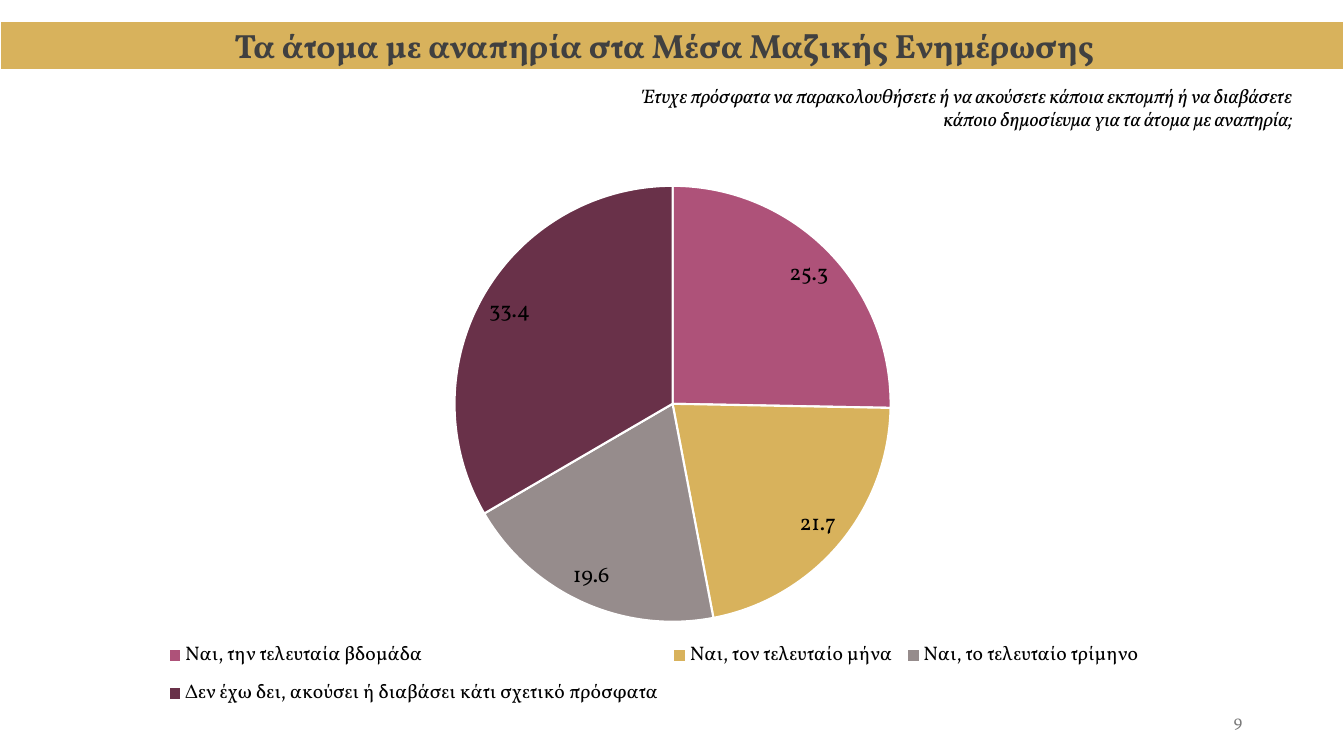
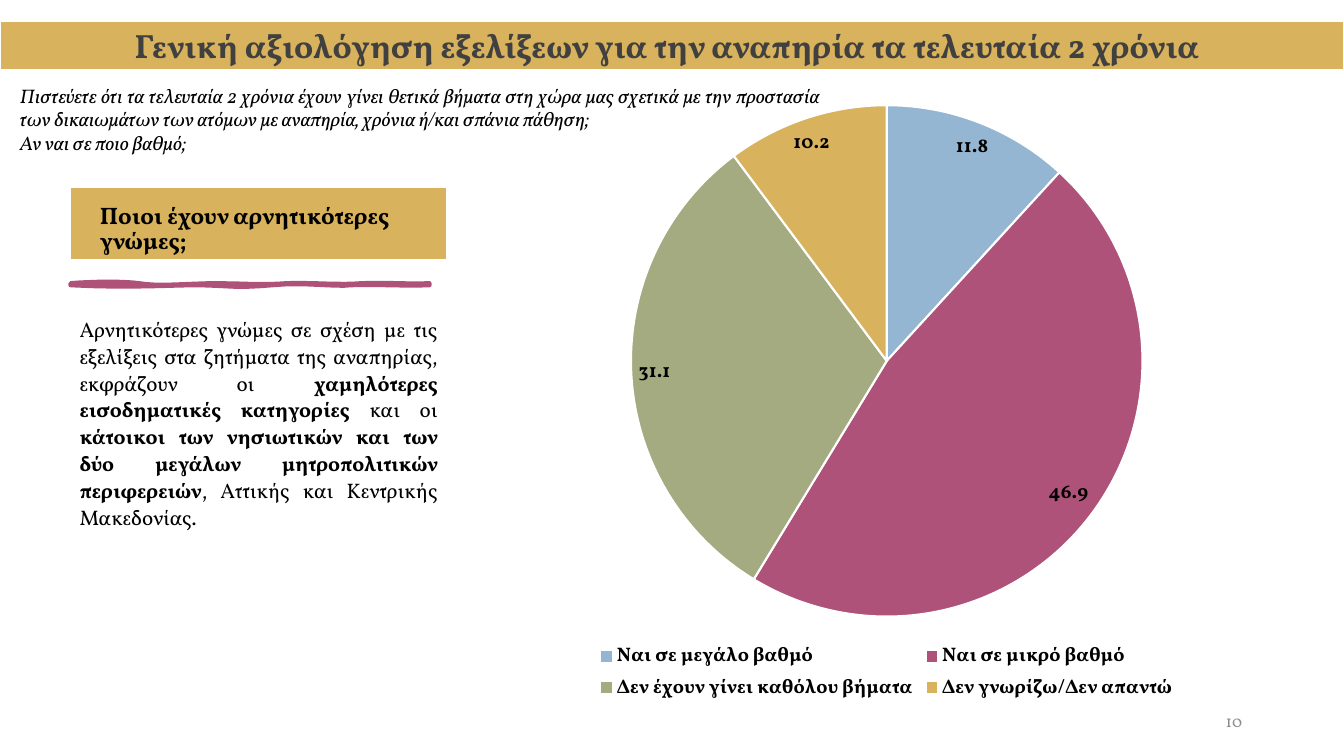
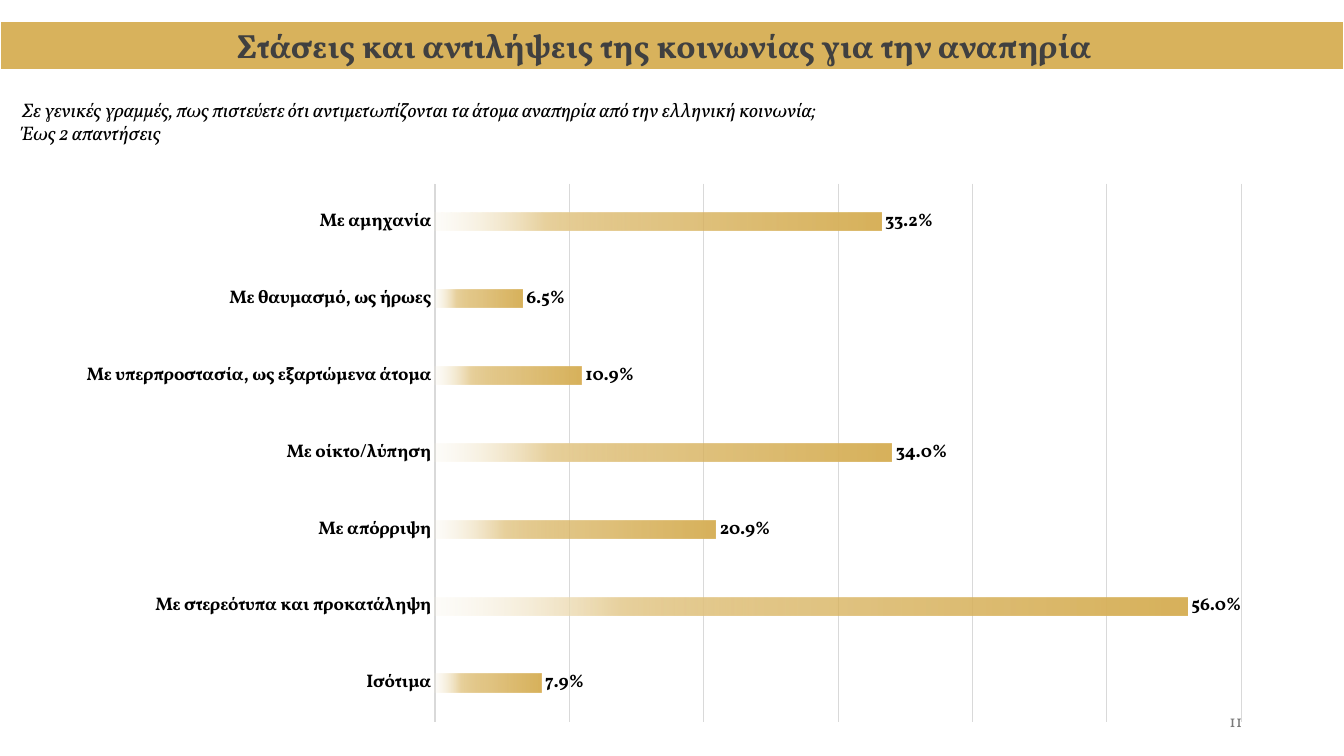
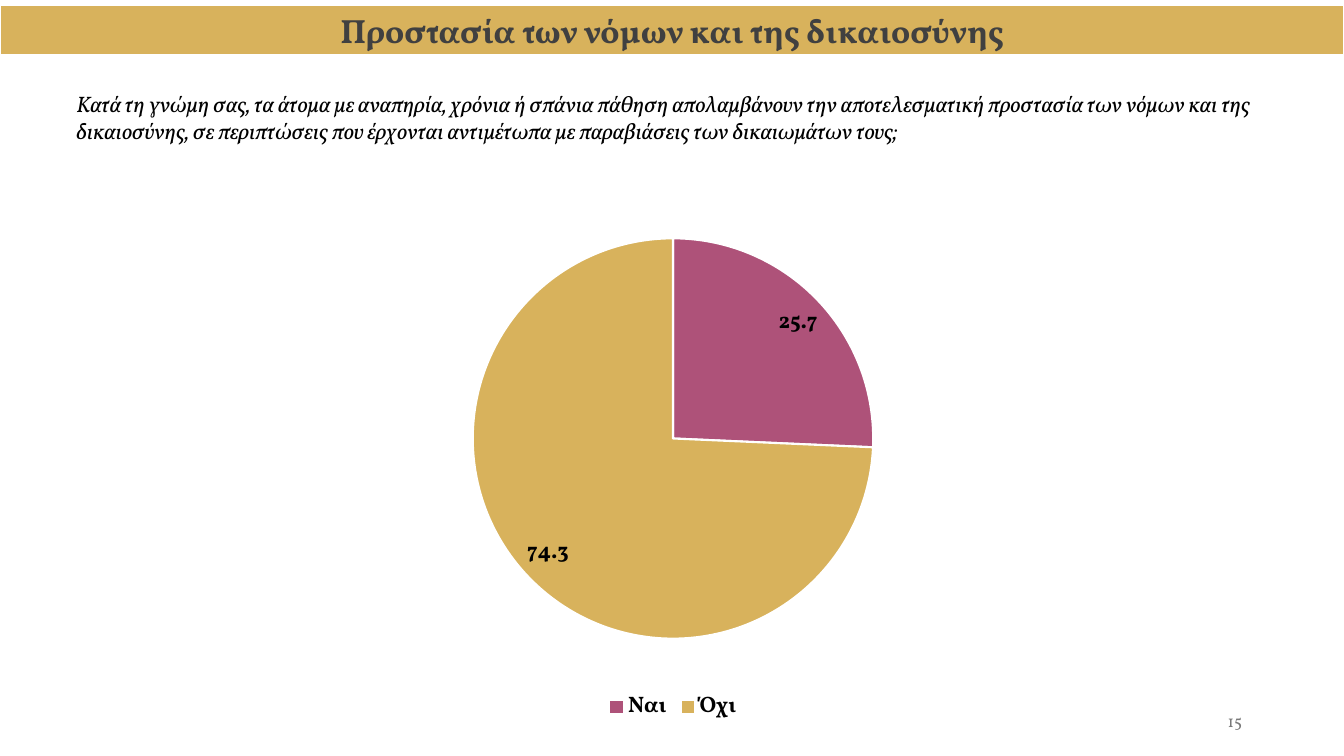
"""Build four slides of survey results about disability, with pie and bar charts."""
from lxml import etree
from pptx import Presentation
from pptx.chart.data import CategoryChartData
from pptx.dml.color import RGBColor
from pptx.enum.chart import XL_CHART_TYPE as ChartType, XL_LABEL_POSITION as LabelPosition
from pptx.enum.chart import XL_LEGEND_POSITION as LegendPosition, XL_TICK_LABEL_POSITION as TickLabels
from pptx.enum.chart import XL_TICK_MARK as TickMark
from pptx.enum.shapes import MSO_SHAPE as Shape
from pptx.enum.text import MSO_ANCHOR as Anchor, PP_ALIGN as Align
from pptx.oxml import parse_xml
from pptx.oxml.ns import nsdecls, qn
from pptx.util import Inches, Pt

WIDTH, HEIGHT = 13.33, 7.5
FONT = "Vollkorn"
GOLD, ROSE, PLUM, TAUPE = "D8B25C", "AE5279", "693149", "968C8C"
BLUE, SAGE, WHITE, BLACK = "94B6D2", "A5AB81", "FFFFFF", "000000"
TITLE_STYLE = {"size": 24, "bold": True, "color": "404040"}
NUMBER_BOX = (9.42, 6.95, 3, 0.4)
GRADIENT = [(0, GOLD, 100), (51, GOLD, 75), (75, "E8D19D", 100), (100, "F7F0DE", 15)]

SLIDES = [
    {"title": "Τα άτομα με αναπηρία στα Μέσα Μαζικής Ενημέρωσης",
     "number": "9", "title_inset": 0.26,
     "question": ["Έτυχε πρόσφατα να παρακολουθήσετε ή να ακούσετε κάποια εκπομπή ή να διαβάσετε "
                  "κάποιο δημοσίευμα για τα άτομα με αναπηρία;"],
     "question_box": (6.24, 0.78, 6.68, 0.57), "align": Align.RIGHT,
     "chart_box": (0.7, 1.35, 11.93, 5.95), "plot": (0.315, 0.083, 0.371, 0.727),
     "font": {"size": 16, "bold": False}, "legend_size": 14,
     "legend": (0.075, 0.825, 0.82, 0.145),
     "data": [("Ναι, την τελευταία βδομάδα", 25.3, ROSE),
              ("Ναι, τον τελευταίο μήνα", 21.7, GOLD),
              ("Ναι, το τελευταίο τρίμηνο", 19.6, TAUPE),
              ("Δεν έχω δει, ακούσει ή διαβάσει κάτι σχετικό πρόσφατα", 33.4, PLUM)]},
    {"title": "Γενική αξιολόγηση εξελίξεων για την αναπηρία τα τελευταία 2 χρόνια",
     "number": "10", "number_color": "8C8C8C",
     "question": ["Πιστεύετε ότι τα τελευταία 2 χρόνια έχουν γίνει θετικά βήματα στη χώρα μας "
                  "σχετικά με την προστασία των δικαιωμάτων των ατόμων με αναπηρία, χρόνια "
                  "ή/και σπάνια πάθηση;", "Αν ναι σε ποιο βαθμό;"],
     "question_box": (0.1, 0.78, 8.14, 0.81), "align": Align.JUSTIFY,
     "chart_box": (5.02, 0.9, 7.55, 6.1), "plot": (0.164, 0.023, 0.672, 0.833),
     "font": {"size": 14, "bold": True}, "legend_size": 14,
     "data": [("Ναι σε μεγάλο βαθμό", 11.8, BLUE),
              ("Ναι σε μικρό βαθμό", 46.9, ROSE),
              ("Δεν έχουν γίνει καθόλου βήματα", 31.1, SAGE),
              ("Δεν γνωρίζω/Δεν απαντώ", 10.2, GOLD)],
     "heading": "Ποιοι έχουν αρνητικότερες γνώμες;",
     "comment": [("Αρνητικότερες γνώμες σε σχέση με τις εξελίξεις στα ζητήματα της αναπηρίας, "
                  "εκφράζουν οι ", False),
                 ("χαμηλότερες εισοδηματικές κατηγορίες ", True),
                 ("και οι ", False),
                 ("κάτοικοι των νησιωτικών και των δύο μεγάλων μητροπολιτικών περιφερειών", True),
                 (", Αττικής και Κεντρικής Μακεδονίας.", False)]},
    {"title": "Στάσεις και αντιλήψεις της κοινωνίας για την αναπηρία",
     "number": "11", "title_inset": 0.26,
     "question": ["Σε γενικές γραμμές, πως πιστεύετε ότι αντιμετωπίζονται τα άτομα αναπηρία "
                  "από την ελληνική κοινωνία;", "Έως 2 απαντήσεις"],
     "question_box": (0.12, 0.92, 10.13, 0.57),
     "chart_box": (0.62, 1.71, 11.93, 5.56), "font": {"size": 13, "bold": True},
     "data": [("Ισότιμα", 0.079), ("Με στερεότυπα και προκατάληψη", 0.56),
              ("Με απόρριψη", 0.209), ("Με οίκτο/λύπηση", 0.34),
              ("Με υπερπροστασία, ως εξαρτώμενα άτομα", 0.109),
              ("Με θαυμασμό, ως ήρωες", 0.065), ("Με αμηχανία", 0.332)]},
    {"title": "Προστασία των νόμων και της δικαιοσύνης",
     "number": "15", "band_top": 0.05, "title_inset": 0.1,
     "question": ["Κατά τη γνώμη σας, τα άτομα με αναπηρία, χρόνια ή σπάνια πάθηση απολαμβάνουν "
                  "την αποτελεσματική προστασία των νόμων και της δικαιοσύνης, σε περιπτώσεις "
                  "που έρχονται αντιμέτωπα με παραβιάσεις των δικαιωμάτων τους;"],
     "question_box": (0.66, 0.85, 12.02, 0.64), "question_size": 16,
     "chart_box": (3.6, 1.92, 6.15, 5.29), "plot": (0.177, 0.084, 0.646, 0.751),
     "font": {"size": 16, "bold": True}, "legend_size": 16,
     "data": [("Ναι", 25.7, ROSE), ("Όχι", 74.3, GOLD)]},
]

STROKE_START = (0.7, 2.81)
STROKE_CURVES = [
    ((0.97, 2.79), (1.21, 2.79), (1.38, 2.81)), ((1.55, 2.84), (1.77, 2.82), (2.09, 2.81)),
    ((2.41, 2.81), (2.6, 2.83), (2.84, 2.81)), ((3.08, 2.8), (3.39, 2.83), (3.59, 2.81)),
    ((3.79, 2.8), (4.12, 2.82), (4.26, 2.81)), ((4.26, 2.82), (4.26, 2.83), (4.26, 2.83)),
    ((4.08, 2.84), (3.64, 2.82), (3.48, 2.83)), ((3.32, 2.85), (3.04, 2.8), (2.7, 2.83)),
    ((2.35, 2.86), (2.31, 2.84), (1.99, 2.83)), ((1.66, 2.83), (1.32, 2.86), (0.7, 2.83)),
]


def rgb(value):
    return RGBColor.from_string(value)


def inches(box):
    return [Inches(length) for length in box]


def set_all(target, values):
    for name, value in values.items():
        setattr(target, name, value)


def style_font(font, size, bold=False, italic=False, color=BLACK):
    set_all(font, {"name": FONT, "size": Pt(size), "bold": bold, "italic": italic})
    font.color.rgb = rgb(color)


def paint(shape, fill, line, width):
    shape.shadow.inherit = False
    shape.fill.solid()
    shape.fill.fore_color.rgb = rgb(fill)
    shape.line.color.rgb = rgb(line)
    shape.line.width = Pt(width)


def write(shape, paragraphs, style, frame_format=None, **paragraph_format):
    """Fill a shape with paragraphs, each a list of (text, format) runs."""
    frame = shape.text_frame
    set_all(frame, {"word_wrap": True, "vertical_anchor": Anchor.TOP, **(frame_format or {})})
    for index, runs in enumerate(paragraphs):
        paragraph = frame.add_paragraph() if index else frame.paragraphs[0]
        set_all(paragraph, {"alignment": Align.LEFT, **paragraph_format})
        for text, changes in runs:
            run = paragraph.add_run()
            run.text = text
            style_font(run.font, **{**style, **changes})


def add_text(slide, box, paragraphs, style, frame_format=None, **paragraph_format):
    write(slide.shapes.add_textbox(*inches(box)), paragraphs, style, frame_format, **paragraph_format)


def add_block(slide, box, text, style, frame_format, **paragraph_format):
    block = slide.shapes.add_shape(Shape.RECTANGLE, *inches(box))
    paint(block, GOLD, WHITE, 2)
    write(block, [[(text, {})]], style, frame_format, **paragraph_format)


def add_chart(slide, content, kind, number_format, position):
    data = CategoryChartData()
    data.categories = [row[0] for row in content["data"]]
    data.add_series("Series 1", [row[1] for row in content["data"]])
    chart = slide.shapes.add_chart(kind, *inches(content["chart_box"]), data).chart
    set_all(chart, {"has_title": False, "has_legend": False})
    style_font(chart.font, **content["font"])
    plot = chart.plots[0]
    set_all(plot, {"vary_by_categories": kind == ChartType.PIE, "has_data_labels": True})
    labels = plot.data_labels
    set_all(labels, {"show_value": True, "number_format": number_format,
                     "number_format_is_linked": False, "position": position})
    style_font(labels.font, **content["font"])
    return chart


def place_part(part, shares, index, target=()):
    """Set the manual layout of a plot area or legend, as shares of the chart."""
    for layout in part.findall(qn("c:layout")):
        part.remove(layout)
    layout = etree.Element(qn("c:layout"))
    manual = etree.SubElement(layout, qn("c:manualLayout"))
    for name, value in [*target, ("xMode", "edge"), ("yMode", "edge"), *zip("xywh", shares)]:
        etree.SubElement(manual, qn("c:" + name)).set("val", str(value))
    part.insert(index, layout)


def add_pie(slide, content):
    chart = add_chart(slide, content, ChartType.PIE, "###0.0", LabelPosition.BEST_FIT)
    for index, (_, _, color) in enumerate(content["data"]):
        slice_format = chart.plots[0].series[0].points[index].format
        slice_format.fill.solid()
        slice_format.fill.fore_color.rgb = rgb(color)
        slice_format.line.color.rgb = rgb(WHITE)
        slice_format.line.width = Pt(1.5)
    chart.has_legend = True
    set_all(chart.legend, {"position": LegendPosition.BOTTOM, "include_in_layout": False})
    style_font(chart.legend.font, **{**content["font"], "size": content["legend_size"]})
    plot_area, legend = (chart.element.find(".//" + qn(name)) for name in ("c:plotArea", "c:legend"))
    place_part(plot_area, content["plot"], 0, [("layoutTarget", "inner")])
    if "legend" in content:
        place_part(legend, content["legend"], 1)


def add_bars(slide, content):
    chart = add_chart(slide, content, ChartType.BAR_CLUSTERED, "###0.0%", LabelPosition.OUTSIDE_END)
    set_all(chart.plots[0], {"gap_width": 326, "overlap": -58})
    categories, values = chart.category_axis, chart.value_axis
    set_all(categories, {"major_tick_mark": TickMark.NONE, "minor_tick_mark": TickMark.NONE,
                         "tick_label_position": TickLabels.NEXT_TO_AXIS,
                         "has_major_gridlines": False})
    style_font(categories.tick_labels.font, **content["font"])
    set_all(values, {"visible": False, "has_major_gridlines": True, "minimum_scale": 0,
                     "maximum_scale": 0.6, "major_unit": 0.1,
                     "major_tick_mark": TickMark.NONE, "minor_tick_mark": TickMark.NONE})
    for line, width in [(categories.format.line, 1.5), (values.major_gridlines.format.line, 0.75)]:
        line.color.rgb = rgb("D9D9D9")
        line.width = Pt(width)
    stops = "".join(f'<a:gs pos="{place * 1000}"><a:srgbClr val="{color}">'
                    f'<a:alpha val="{alpha * 1000}"/></a:srgbClr></a:gs>'
                    for place, color, alpha in GRADIENT)
    gradient = parse_xml(f'<a:gradFill {nsdecls("a")}><a:gsLst>{stops}</a:gsLst>'
                         '<a:lin ang="10800000" scaled="0"/></a:gradFill>')
    series = chart.plots[0].series[0]
    series.format.fill.solid()
    solid = chart.element.find(".//" + qn("c:ser")).find(qn("c:spPr")).find(qn("a:solidFill"))
    solid.getparent().replace(solid, gradient)


def add_stroke(slide, steps=8, units=1000):
    points, start = [], STROKE_START
    for first, second, end in STROKE_CURVES:
        for step in range(1, steps + 1):
            t = step / steps
            weights = ((1 - t) ** 3, 3 * t * (1 - t) ** 2, 3 * t * t * (1 - t), t ** 3)
            corners = (start, first, second, end)
            points.append([units * sum(w * corner[axis] for w, corner in zip(weights, corners))
                           for axis in (0, 1)])
        start = end
    origin = [units * length for length in STROKE_START]
    builder = slide.shapes.build_freeform(*origin, scale=Inches(1) / units)
    builder.add_line_segments(points, close=True)
    paint(builder.convert_to_shape(), ROSE, ROSE, 3)


def add_side_panel(slide, content):
    left, width = 0.69, 3.75
    add_block(slide, (left, 1.85, width, 0.73), content["heading"], {"size": 17, "bold": True},
              {"vertical_anchor": Anchor.BOTTOM, "margin_left": Inches(0.3)},
              line_spacing=0.9, space_after=Pt(6))
    add_stroke(slide)
    add_text(slide, (left, 3.07, width, 3.73),
             [[(text, {"bold": bold}) for text, bold in content["comment"]]], {"size": 15},
             alignment=Align.JUSTIFY, line_spacing=1.07, space_after=Pt(8))


def build_slide(presentation, content):
    slide = presentation.slides.add_slide(presentation.slide_layouts[6])
    if "plot" in content:
        add_pie(slide, content)
    else:
        add_bars(slide, content)
    if "heading" in content:
        add_side_panel(slide, content)
    add_block(slide, (0, content.get("band_top", 0.2), WIDTH, 0.5), content["title"], TITLE_STYLE,
              {"margin_right": Inches(content.get("title_inset", 0.2))},
              alignment=Align.CENTER, space_after=Pt(6))
    add_text(slide, NUMBER_BOX, [[(content["number"], {})]],
             {"size": 12, "color": content.get("number_color", "797979")},
             {"vertical_anchor": Anchor.MIDDLE}, alignment=Align.RIGHT)
    add_text(slide, content["question_box"], [[(line, {})] for line in content["question"]],
             {"size": content.get("question_size", 14), "italic": True},
             alignment=content.get("align", Align.LEFT))


def main():
    presentation = Presentation()
    set_all(presentation, {"slide_width": Inches(WIDTH), "slide_height": Inches(HEIGHT)})
    for content in SLIDES:
        build_slide(presentation, content)
    presentation.save("out.pptx")


if __name__ == "__main__":
    main()
